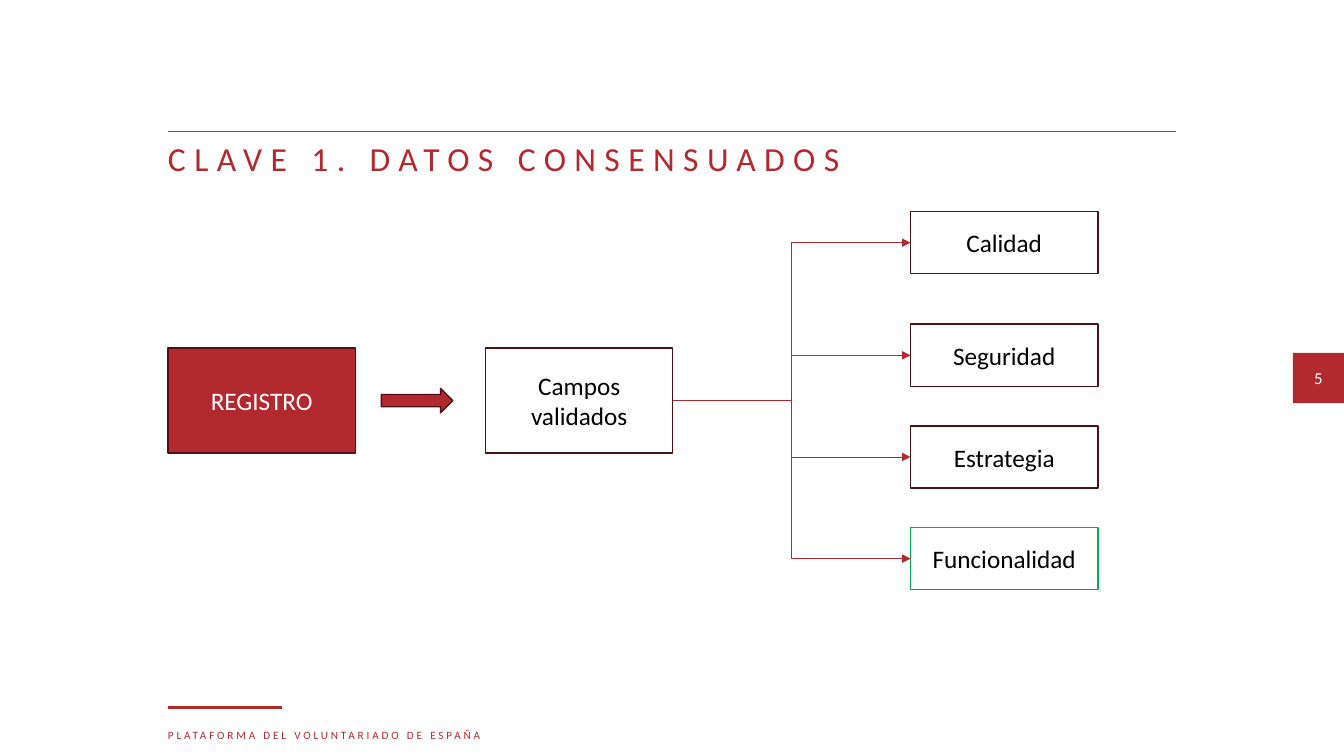
from lxml.etree import SubElement
from pptx import Presentation
from pptx.dml.color import RGBColor
from pptx.enum.shapes import MSO_CONNECTOR, MSO_SHAPE
from pptx.enum.text import MSO_ANCHOR, MSO_AUTO_SIZE, PP_ALIGN
from pptx.oxml.ns import qn
from pptx.util import Inches, Pt

WIDTH, HEIGHT = Inches(13.33), Inches(7.5)
COLUMN, ROW = WIDTH / 16, HEIGHT / 9
RED, DARK_RED, GREEN = "B2292E", "4E1214", "00B050"
WHITE, BLACK = "FFFFFF", "000000"
LEFT_INSET_ONLY_ZERO = (0, 0.05, 0.1, 0.05)
NODE_WIDTH, NODE_HEIGHT, TARGET_HEIGHT = 2.23, 1.25, 0.74


def color(value):
    """Turn a hex string into a colour."""
    return RGBColor.from_string(value)


def grid(left, top, width, height):
    """Turn columns and rows into slide lengths."""
    return (round(left * COLUMN), round(top * ROW),
            round(width * COLUMN), round(height * ROW))


def write(frame, text, size=18, ink=BLACK, spacing=0, align=PP_ALIGN.CENTER,
          anchor=MSO_ANCHOR.MIDDLE, insets=(0.1, 0.05, 0.1, 0.05), line_spacing=1):
    """Put formatted text in a frame."""
    frame.text = text
    frame.word_wrap = True
    frame.auto_size = MSO_AUTO_SIZE.NONE
    frame.vertical_anchor = anchor
    (frame.margin_left, frame.margin_top,
     frame.margin_right, frame.margin_bottom) = map(Inches, insets)
    paragraph = frame.paragraphs[0]
    paragraph.alignment = align
    paragraph.line_spacing = line_spacing
    run = paragraph.runs[0]
    run.font.name = "Calibri"
    run.font.size = Pt(size)
    run.font.color.rgb = color(ink)
    if spacing:
        run.font._element.set("spc", str(spacing * 100))


def add_block(slide, box, fill=None, outline=None, kind=MSO_SHAPE.RECTANGLE):
    """Draw a flat preset shape on the grid."""
    block = slide.shapes.add_shape(kind, *grid(*box))
    block.shadow.inherit = False
    if fill:
        block.fill.solid()
        block.fill.fore_color.rgb = color(fill)
    else:
        block.fill.background()
    if outline:
        block.line.color.rgb = color(outline)
        block.line.width = Pt(1)
    else:
        block.line.fill.background()
    return block


def add_line(slide, left, top, width, weight, kind=MSO_CONNECTOR.STRAIGHT):
    """Draw a red line without shadow from a grid point."""
    x, y, length, _ = grid(left, top, width, 0)
    line = slide.shapes.add_connector(kind, x, y, x + length, y)
    line.line.color.rgb = color(RED)
    line.line.width = Pt(weight)
    SubElement(line._element.spPr, qn("a:effectLst"))
    return line


def link(slide, source, target):
    """Join two nodes with an elbow arrow."""
    elbow = add_line(slide, 0, 0, 1, 0.5, MSO_CONNECTOR.ELBOW)
    elbow.begin_connect(source, 3)
    elbow.end_connect(target, 1)
    SubElement(elbow.line._get_or_add_ln(), qn("a:tailEnd"), type="triangle")


def add_heading(slide, box, text):
    """Place the rule and the title below it."""
    left, top, width, height = box
    add_line(slide, left, top, 12, 0.75)
    title = slide.shapes.title
    title.left, title.top, title.width, title.height = grid(
        left, top + 0.07, width, height)
    write(title.text_frame, text, size=24, ink=RED, spacing=6,
          align=PP_ALIGN.LEFT, anchor=MSO_ANCHOR.TOP,
          insets=LEFT_INSET_ONLY_ZERO, line_spacing=0.9)


def add_footer(slide, box, text):
    """Place the short rule and the organisation line."""
    left, top, width, height = box
    add_line(slide, left, top, 1.36, 2.25)
    footer = slide.shapes.add_textbox(*grid(left, top + 0.19, width, height))
    write(footer.text_frame, text, size=8, ink=RED, spacing=2,
          align=PP_ALIGN.LEFT, anchor=MSO_ANCHOR.TOP,
          insets=LEFT_INSET_ONLY_ZERO)


def add_page_number(slide, box, number):
    """Place the numbered tab at the slide edge."""
    tab = add_block(slide, box, fill=RED)
    write(tab.text_frame, number, size=12, ink=WHITE)


def add_diagram(slide, box, targets):
    """Place the flow from the register to its four targets."""
    left, top, width, height = box
    middle = top + height / 2
    node_top = middle - NODE_HEIGHT / 2

    register = add_block(slide, (left, node_top, NODE_WIDTH, NODE_HEIGHT),
                         fill=RED, outline=DARK_RED)
    write(register.text_frame, "REGISTRO", ink=WHITE)
    fields = add_block(slide, (left + 3.78, node_top, NODE_WIDTH, NODE_HEIGHT),
                       outline=DARK_RED)
    write(fields.text_frame, "Campos validados")

    for label, offset, outline in targets:
        target = add_block(
            slide, (left + width - NODE_WIDTH, top + offset,
                    NODE_WIDTH, TARGET_HEIGHT), outline=outline)
        write(target.text_frame, label)
        link(slide, fields, target)

    add_block(slide, (left + 2.54, middle - 0.145, 0.85, 0.29),
              fill=RED, outline=DARK_RED, kind=MSO_SHAPE.RIGHT_ARROW)


def main():
    """Build and save the slide."""
    deck = Presentation()
    deck.slide_width, deck.slide_height = WIDTH, HEIGHT
    slide = deck.slides.add_slide(deck.slide_layouts[5])
    add_heading(slide, (2, 1.57, 12.94, 0.65), "CLAVE 1. DATOS CONSENSUADOS")
    add_footer(slide, (2, 8.42, 8, 0.29), "PLATAFORMA DEL VOLUNTARIADO DE ESPAÑA")
    add_page_number(slide, (15.39, 4.2, 0.61, 0.6), "5")
    add_diagram(slide, (2, 2.52, 11.07, 4.5), [
        ("Calidad", 0, DARK_RED),
        ("Seguridad", 1.34, DARK_RED),
        ("Estrategia", 2.55, DARK_RED),
        ("Funcionalidad", 3.76, GREEN),
    ])
    deck.save("out.pptx")


if __name__ == "__main__":
    main()
